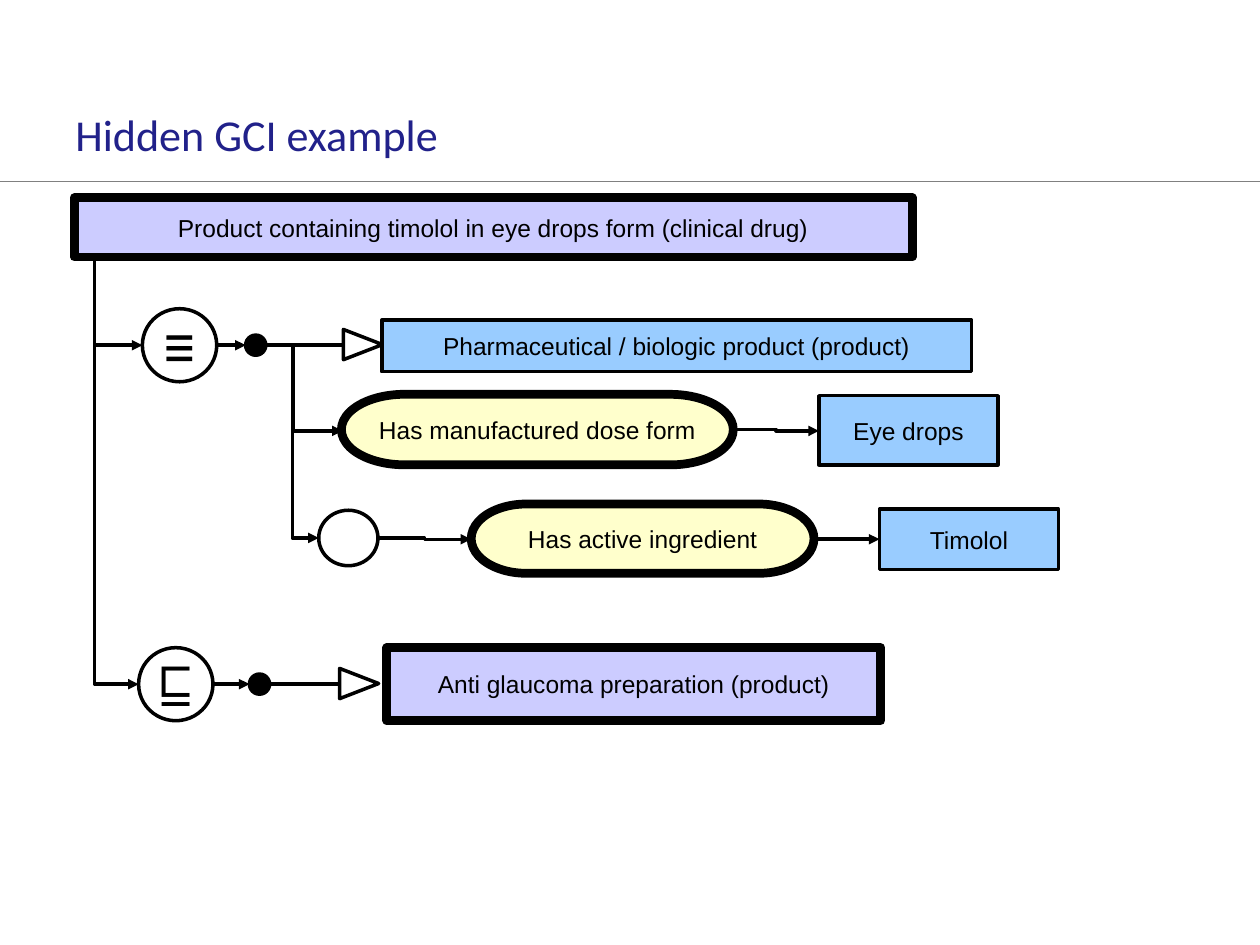
"""Build the "Hidden GCI example" concept diagram slide."""
from lxml.etree import SubElement
from pptx import Presentation
from pptx.dml.color import RGBColor
from pptx.enum.shapes import MSO_CONNECTOR, MSO_SHAPE
from pptx.enum.text import MSO_ANCHOR, PP_ALIGN
from pptx.oxml.ns import qn
from pptx.util import Inches, Pt

rgb = RGBColor.from_string


def put_text(sp, text, font, size, color, align, inset, wrap):
    tf = sp.text_frame
    frame = {"word_wrap": wrap, "vertical_anchor": MSO_ANCHOR.MIDDLE}
    for side in ("left", "right", "top", "bottom"):
        frame["margin_" + side] = Inches(inset)
    for name, value in frame.items():
        setattr(tf, name, value)
    p = tf.paragraphs[0]
    p.alignment = align
    r = p.add_run()
    r.text = text
    for name, value in {"name": font, "size": Pt(size)}.items():
        setattr(r.font, name, value)
    r.font.color.rgb = rgb(color)


def add_line(kind, x1, y1, x2, y2, color="000000", width=2, arrow=False):
    c = s.shapes.add_connector(kind, Inches(x1), Inches(y1), Inches(x2), Inches(y2))
    c.line.color.rgb = rgb(color)
    c.line.width = Pt(width)
    if arrow:
        SubElement(c.line._get_or_add_ln(), qn("a:tailEnd"), type="triangle")
    SubElement(c._element.spPr, qn("a:effectLst"))
    return c


prs = Presentation()
prs.slide_width, prs.slide_height = Inches(10), Inches(7.5)
s = prs.slides.add_slide(prs.slide_layouts[6])

add_line(MSO_CONNECTOR.STRAIGHT, 0, 1.44, 10, 1.44, "808080", 0.75)
title = s.shapes.add_textbox(Inches(0.5), Inches(0.78), Inches(7.21), Inches(0.56))
put_text(title, "Hidden GCI example", "Calibri", 25.2, "21218A", PP_ALIGN.LEFT, 0.1, True)

styles = {
    "defined": (MSO_SHAPE.RECTANGLE, "CCCCFF", 5),
    "primitive": (MSO_SHAPE.RECTANGLE, "99CCFF", 2),
    "attribute": (MSO_SHAPE.FLOWCHART_TERMINATOR, "FFFFCC", 5),
    "circle": (MSO_SHAPE.OVAL, "FFFFFF", 2),
    "dot": (MSO_SHAPE.OVAL, "000000", 2),
    "is_a": (MSO_SHAPE.ISOSCELES_TRIANGLE, None, 2),
}
nodes = [
    ("defined", 0.59, 1.57, 6.65, 0.47, "Product containing timolol in eye drops form (clinical drug)"),
    ("circle", 1.13, 2.45, 0.59, 0.58, "≡"),
    ("dot", 1.95, 2.66, 0.16, 0.16, ""),
    ("is_a", 2.76, 2.58, 0.24, 0.31, ""),
    ("primitive", 3.03, 2.54, 4.68, 0.41, "Pharmaceutical / biologic product (product)"),
    ("attribute", 2.71, 3.13, 3.11, 0.56, "Has manufactured dose form"),
    ("primitive", 6.5, 3.14, 1.42, 0.55, "Eye drops"),
    ("circle", 2.53, 4.05, 0.47, 0.44, ""),
    ("attribute", 3.74, 4, 2.72, 0.55, "Has active ingredient"),
    ("primitive", 6.98, 4.04, 1.42, 0.48, "Timolol"),
    ("circle", 1.1, 5.14, 0.59, 0.58, "⊑"),
    ("dot", 1.98, 5.35, 0.16, 0.16, ""),
    ("is_a", 2.73, 5.27, 0.24, 0.31, ""),
    ("defined", 3.07, 5.14, 3.92, 0.58, "Anti glaucoma preparation (product)"),
]
for style, x, y, w, h, text in nodes:
    shape, fill, weight = styles[style]
    sp = s.shapes.add_shape(shape, Inches(x), Inches(y), Inches(w), Inches(h))
    sp.shadow.inherit = False
    sp.line.color.rgb = rgb("000000")
    sp.line.width = Pt(weight)
    if fill:
        sp.fill.solid()
        sp.fill.fore_color.rgb = rgb(fill)
    else:
        sp.fill.background()
        sp.rotation = 90
    if text:
        font, size = ("Noto Sans Mono", 32) if style == "circle" else ("Arial", 14)
        put_text(sp, text, font, size, "000000", PP_ALIGN.CENTER, 0, False)

for x1, x2, y, arrow in [(1.72, 1.95, 2.74, True), (2.11, 2.72, 2.74, False), (2.14, 2.69, 5.43, False)]:
    add_line(MSO_CONNECTOR.STRAIGHT, x1, y, x2, y, arrow=arrow)

elbows = [
    (2.11, 2.74, 2.72, 3.42, 0.356),
    (2.11, 2.74, 2.53, 4.27, 0.5),
    (5.82, 3.41, 6.5, 3.42, 0.5),
    (3, 4.27, 3.74, 4.28, 0.5),
    (6.46, 4.28, 6.98, 4.28, 0.5),
    (1.69, 5.43, 1.98, 5.43, 0.5),
]
for x1, y1, x2, y2, bend in elbows:
    c = add_line(MSO_CONNECTOR.ELBOW, x1, y1, x2, y2, arrow=True)
    guides = c._element.spPr.find(qn("a:prstGeom")).find(qn("a:avLst"))
    SubElement(guides, qn("a:gd"), name="adj1", fmla=f"val {round(bend * 100000)}")

trunk_x, trunk_y = 0.75, 2.04
for x, y in [(1.13, 2.74), (1.1, 5.43)]:
    c = add_line(MSO_CONNECTOR.ELBOW, trunk_x, trunk_y, x, y, arrow=True)
    w, h = y - trunk_y, x - trunk_x
    box = {"left": (trunk_x + x - w) / 2, "top": (trunk_y + y - h) / 2, "width": w, "height": h}
    for name, value in box.items():
        setattr(c, name, Inches(value))
    c._element.spPr.find(qn("a:prstGeom")).set("prst", "bentConnector2")
    for name, value in {"rot": "16200000", "flipH": "1"}.items():
        c._element.spPr.find(qn("a:xfrm")).set(name, value)

prs.save("out.pptx")
